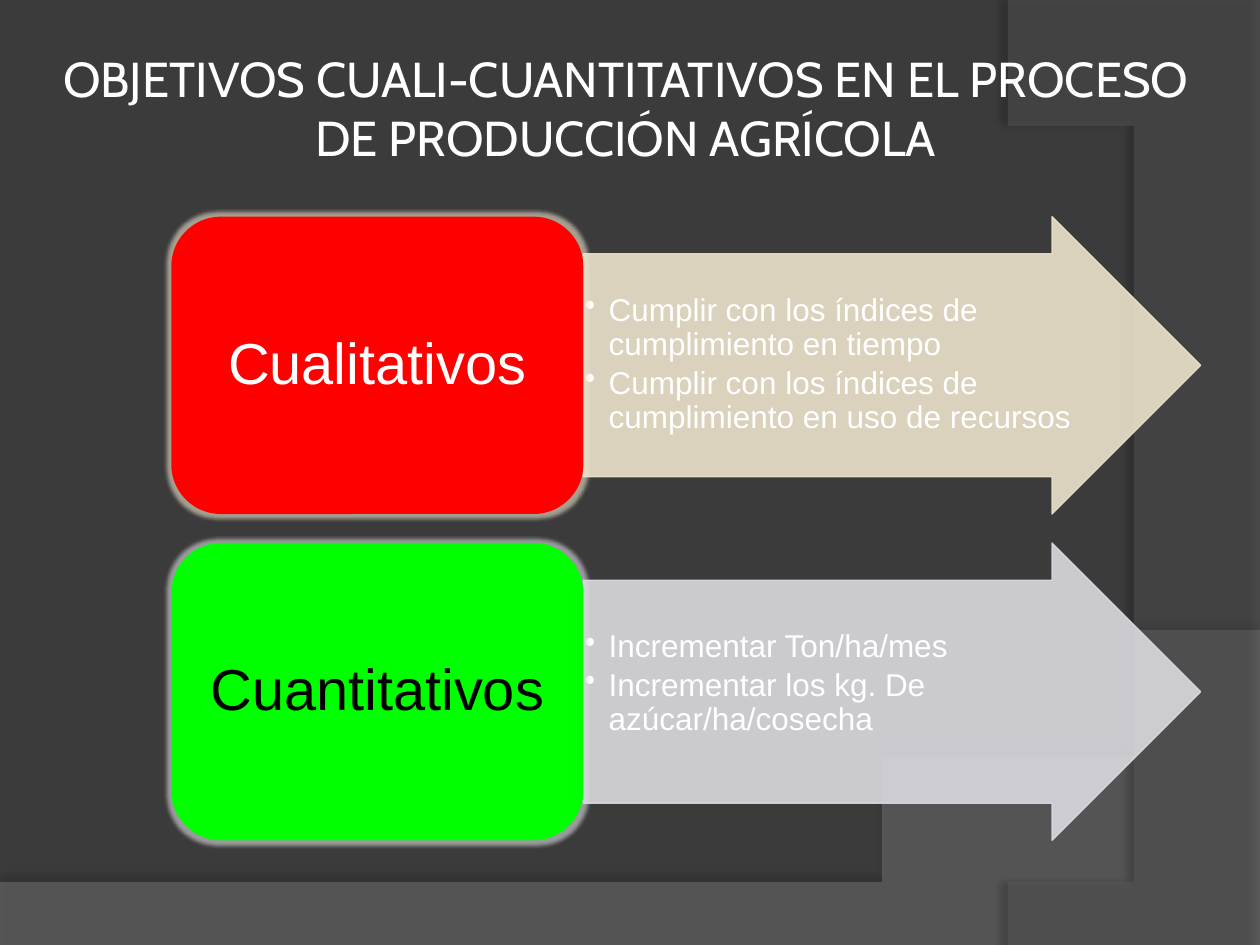
from lxml import etree
from pptx import Presentation, util as u
from pptx.dml.color import RGBColor
from pptx.enum import shapes, text
from pptx.oxml import parse_xml
from pptx.oxml.ns import qn

TITLE = "OBJETIVOS CUALI-CUANTITATIVOS EN EL PROCESO DE PRODUCCIÓN AGRÍCOLA"
# text_drop: distance from the arrow's body to its first bullet, in inches
OBJECTIVES = [
    {"name": "Cualitativos", "fill": "FF0000", "ink": "FFFFFF", "tint": "ECE3CC", "text_drop": 0.31,
     "bullets": ["Cumplir con los índices de cumplimiento en tiempo",
                 "Cumplir con los índices de cumplimiento en uso de recursos"]},
    {"name": "Cuantitativos", "fill": "00FF00", "ink": "000000", "tint": "DBDAE0", "text_drop": 0.39,
     "bullets": ["Incrementar Ton/ha/mes", "Incrementar los kg. De azúcar/ha/cosecha"]},
]
# Each wave: straight corners, then one Bézier curve back to the first corner
WAVES = [
    {"corners": [(0, 7.05), (0, 7.5), (10, 7.5), (10, 5.2)],
     "curve": [(5.59, 7.29), (3.91, 7.19), (0, 7.05)],
     "fill": "7F7F7F", "alpha": 45, "shadow": {"alpha": 35, "distance": 3.5, "angle": 270}},
    {"corners": [(8, 0), (10, 0.02), (10, 7.5), (8.21, 7.5)],
     "curve": [(9.35, 6.19), (10.18, 3), (8, 0)],
     "fill": "5E5E5E", "alpha": 40, "shadow": {"alpha": 45, "distance": 4, "angle": 180}},
]
THEME = {"background": "3B3B3B", "white": "FFFFFF", "title_font": "Cabin", "body_font": "Arial",
         "title_size": 28, "name_size": 33, "bullet_size": 18, "tint_alpha": 90, "glow_alpha": 60}

WIDTH, HEIGHT = 10, 7.5
LEFT, TOP, ROW_HEIGHT, ROW_STEP = 1.36, 1.72, 2.36, 2.59
BOX_WIDTH, ARROW_WIDTH, BULLETS_WIDTH = 3.27, 4.9, 4.02
BODY_SHARE = 0.75
BULLET_INDENT = 0.19
CURVE_STEPS = 60
NAMESPACE = "http://schemas.openxmlformats.org/drawingml/2006/main"


def inches(*values):
    return [u.Inches(value) for value in values]


def set_solid(fill, color, alpha=100):
    fill.solid()
    fill.fore_color.rgb = RGBColor.from_string(color)
    if alpha < 100:
        node = fill._xPr.find(".//" + qn("a:srgbClr"))
        etree.SubElement(node, qn("a:alpha")).set("val", str(alpha * 1000))


def set_effect(shape, tag, color, alpha, **attributes):
    """Put one glow or shadow effect on the shape."""
    shape.shadow.inherit = False
    effects = shape._element.spPr.find(qn("a:effectLst"))
    settings = " ".join(f'{name}="{value}"' for name, value in attributes.items())
    effects.append(parse_xml(
        f'<a:{tag} xmlns:a="{NAMESPACE}" {settings}><a:srgbClr val="{color}">'
        f'<a:alpha val="{alpha * 1000}"/></a:srgbClr></a:{tag}>'))


def write(shape, lines, *, font, size, color, align=text.PP_ALIGN.CENTER,
          anchor=text.MSO_ANCHOR.MIDDLE, inset=0.05, line_spacing=None, space_after=0, bullet=False):
    frame = shape.text_frame
    frame.word_wrap = True
    frame.vertical_anchor = anchor
    frame.margin_left = frame.margin_right = frame.margin_top = frame.margin_bottom = u.Inches(inset)
    for index, line in enumerate(lines):
        paragraph = frame.paragraphs[0] if index == 0 else frame.add_paragraph()
        paragraph.alignment = align
        paragraph.line_spacing = line_spacing
        paragraph.space_after = u.Pt(space_after)
        run = paragraph.add_run()
        run.text = line
        run.font.name, run.font.size = font, u.Pt(size)
        run.font.color.rgb = RGBColor.from_string(color)
        if bullet:
            properties = paragraph._p.get_or_add_pPr()
            properties.set("marL", str(u.Inches(BULLET_INDENT)))
            properties.set("indent", str(-u.Inches(BULLET_INDENT)))
            etree.SubElement(properties, qn("a:buChar")).set("char", "•")


def bezier(start, controls):
    """Return points along a cubic curve, without its start."""
    points = [start, *controls]
    result = []
    for step in range(1, CURVE_STEPS + 1):
        t = step / CURVE_STEPS
        weights = [(1 - t) ** 3, 3 * t * (1 - t) ** 2, 3 * t ** 2 * (1 - t), t ** 3]
        result.append(tuple(sum(w * p[axis] for w, p in zip(weights, points)) for axis in (0, 1)))
    return result


def add_wave(slide, wave):
    corners = wave["corners"]
    builder = slide.shapes.build_freeform(*corners[0], scale=u.Inches(1))
    builder.add_line_segments(corners[1:] + bezier(corners[-1], wave["curve"]), close=True)
    shape = builder.convert_to_shape()
    set_solid(shape.fill, wave["fill"], wave["alpha"])
    shape.line.fill.background()
    shadow = wave["shadow"]
    set_effect(shape, "outerShdw", "000000", shadow["alpha"], blurRad=u.Pt(4),
               dist=u.Pt(shadow["distance"]), dir=shadow["angle"] * 60000)


def add_objective(slide, objective, top):
    middle = LEFT + BOX_WIDTH
    arrow = slide.shapes.add_shape(shapes.MSO_SHAPE.RIGHT_ARROW,
                                   *inches(middle, top, ARROW_WIDTH, ROW_HEIGHT))
    arrow.adjustments[0], arrow.adjustments[1] = BODY_SHARE, 0.5
    arrow.shadow.inherit = False
    set_solid(arrow.fill, objective["tint"], THEME["tint_alpha"])
    set_solid(arrow.line.fill, objective["tint"], THEME["tint_alpha"])
    arrow.line.width = u.Pt(0.75)

    body_top = top + ROW_HEIGHT * (1 - BODY_SHARE) / 2
    drop = objective["text_drop"]
    bullets = slide.shapes.add_textbox(
        *inches(middle, body_top + drop, BULLETS_WIDTH, ROW_HEIGHT * BODY_SHARE - drop))
    write(bullets, objective["bullets"], font=THEME["body_font"], size=THEME["bullet_size"],
          color=THEME["white"], align=text.PP_ALIGN.LEFT, anchor=text.MSO_ANCHOR.TOP,
          inset=0.01, line_spacing=0.9, space_after=2.7, bullet=True)

    box = slide.shapes.add_shape(shapes.MSO_SHAPE.ROUNDED_RECTANGLE,
                                 *inches(LEFT, top, BOX_WIDTH, ROW_HEIGHT))
    set_solid(box.fill, objective["fill"])
    box.line.fill.background()
    set_effect(box, "glow", objective["tint"], THEME["glow_alpha"], rad=u.Pt(5))
    write(box, [objective["name"]], font=THEME["body_font"], size=THEME["name_size"],
          color=objective["ink"], line_spacing=0.9)


def main():
    presentation = Presentation()
    presentation.slide_width, presentation.slide_height = inches(WIDTH, HEIGHT)
    slide = presentation.slides.add_slide(presentation.slide_layouts[6])
    set_solid(slide.background.fill, THEME["background"])
    for wave in WAVES:
        add_wave(slide, wave)
    title = slide.shapes.add_textbox(*inches(0.16, 0.3, 9.61, 1.11))
    write(title, [TITLE], font=THEME["title_font"], size=THEME["title_size"], color=THEME["white"])
    for row, objective in enumerate(OBJECTIVES):
        add_objective(slide, objective, TOP + row * ROW_STEP)
    presentation.save("out.pptx")


if __name__ == "__main__":
    main()
